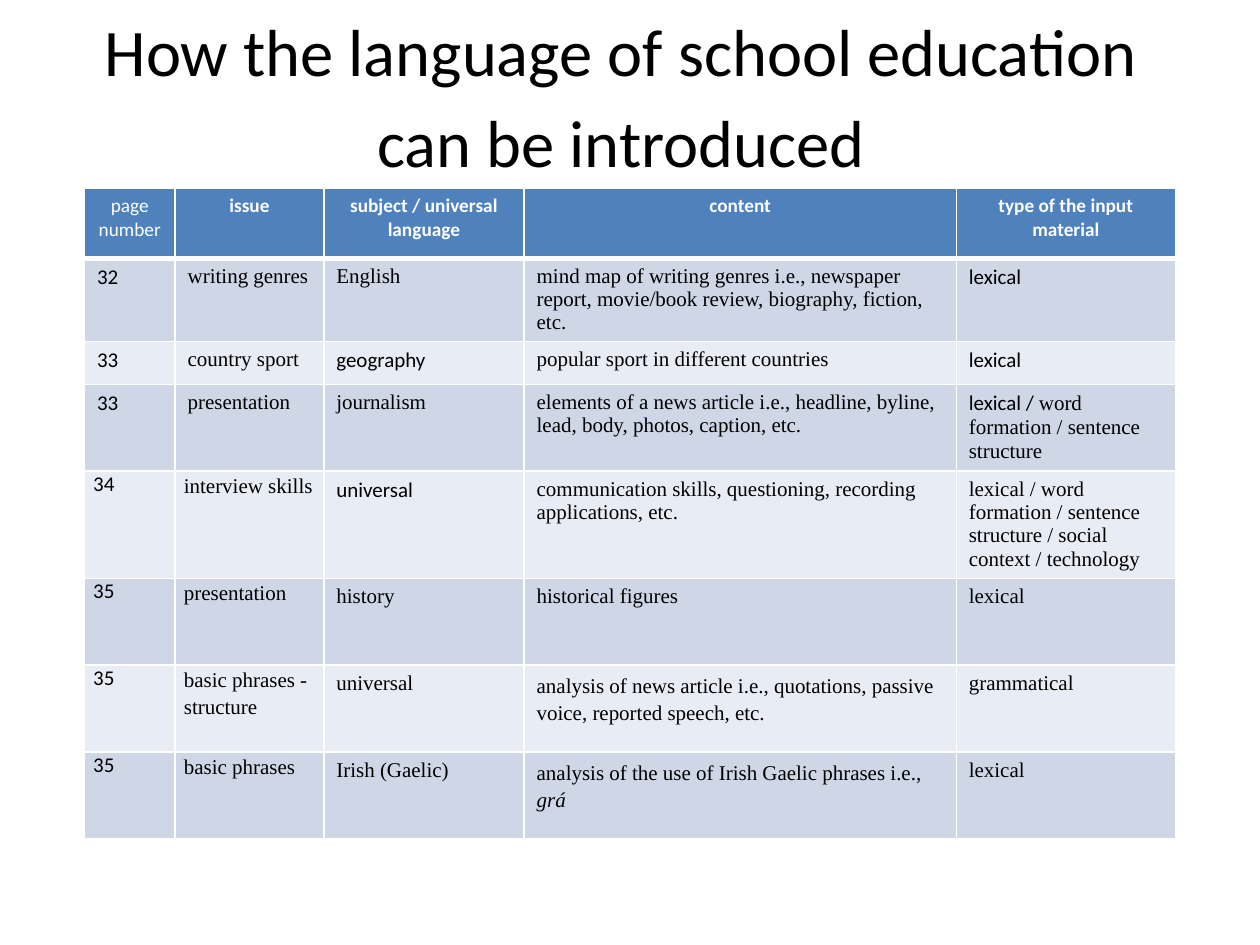
from dataclasses import dataclass

from lxml import etree
from pptx import Presentation
from pptx import util as u
from pptx.dml.color import RGBColor
from pptx.enum import text
from pptx.oxml import ns


@dataclass(frozen=True)
class Theme:
    """Colours, fonts and type sizes of the slide."""
    black: str = "000000"
    white: str = "FFFFFF"
    header: str = "4F81BD"
    bands: tuple = ("CFD7E7", "E8ECF4")
    sans: str = "Calibri"
    serif: str = "Times New Roman"
    title_size: int = 38
    header_size: int = 11
    body_size: int = 12
    loose: float = 1.15


@dataclass(frozen=True)
class Span:
    """A stretch of cell text with its own look."""
    words: str
    font: str = Theme.serif
    italic: bool = False


THEME = Theme()
COLUMNS = (0.72, 1.18, 1.59, 3.43, 1.74)
ROWS = (0.56, 0.66, 0.34, 0.69, 0.85, 0.69, 0.69, 0.69)
FIRST_TIGHT_ROW = 4
FIRST_LOOSE_CONTENT_ROW = 6
HEADINGS = ("page number", "issue", "subject / universal language", "content",
            "type of the input material")


def sans(words):
    """Return a span in the sans font."""
    return Span(words, THEME.sans)


LESSONS = (
    (sans("32"), "writing genres", "English",
     "mind map of writing genres i.e., newspaper report, movie/book review, "
     "biography, fiction, etc.", sans("lexical")),
    (sans("33"), "country sport", sans("geography"),
     "popular sport in different countries", sans("lexical")),
    (sans("33"), "presentation", "journalism",
     "elements of a news article i.e., headline, byline, lead, body, photos, "
     "caption, etc.",
     (sans("lexical / "), Span("word formation / sentence structure"))),
    (sans("34"), "interview skills", sans("universal"),
     "communication skills, questioning, recording applications, etc.",
     "lexical / word formation / sentence structure / social context / technology"),
    (sans("35"), "presentation", "history", "historical figures", "lexical"),
    (sans("35"), "basic phrases - structure", "universal",
     "analysis of news article i.e., quotations, passive voice, reported "
     "speech, etc.", "grammatical"),
    (sans("35"), "basic phrases", "Irish (Gaelic)",
     (Span("analysis of the use of Irish Gaelic phrases i.e., "),
      Span("grá", italic=True)), "lexical"),
)


def as_spans(content):
    """Return cell content as a tuple of spans."""
    if isinstance(content, str):
        return (Span(content),)
    return (content,) if isinstance(content, Span) else content


def add_span(para, words, font, size, color, bold=False, italic=False):
    """Add one formatted run to a paragraph."""
    span = para.add_run()
    span.text = words
    span.font.name = font
    span.font.size = u.Pt(size)
    span.font.bold = bold
    span.font.italic = italic
    span.font.color.rgb = RGBColor.from_string(color)


def add_title(page, words):
    """Add the centred slide title."""
    box = page.shapes.add_textbox(u.Inches(0.43), u.Inches(0.55),
                                  u.Inches(9), u.Inches(1))
    frame = box.text_frame
    frame.word_wrap = True
    frame.auto_size = text.MSO_AUTO_SIZE.NONE
    frame.vertical_anchor = text.MSO_ANCHOR.MIDDLE
    frame.margin_bottom = u.Inches(0.73)
    para = frame.paragraphs[0]
    para.alignment = text.PP_ALIGN.CENTER
    para.line_spacing = THEME.loose
    add_span(para, words, THEME.sans, THEME.title_size, THEME.black)


def set_borders(cell, bottom):
    """Draw white cell borders, with the given bottom width in points."""
    properties = cell._tc.get_or_add_tcPr()
    sides = (("lnL", 1), ("lnR", 1), ("lnT", 1), ("lnB", bottom))
    for place, (side, width) in enumerate(sides):
        line = etree.Element(ns.qn(f"a:{side}"), w=str(u.Pt(width)))
        fill = etree.SubElement(line, ns.qn("a:solidFill"))
        etree.SubElement(fill, ns.qn("a:srgbClr"), val=THEME.white)
        properties.insert(place, line)


def style_cell(cell, color, bottom=1, tight=False):
    """Set the fill, borders and margins of a cell."""
    cell.fill.solid()
    cell.fill.fore_color.rgb = RGBColor.from_string(color)
    set_borders(cell, bottom)
    cell.margin_left = cell.margin_right = u.Inches(0.07 if tight else 0.1)
    cell.margin_top = cell.margin_bottom = u.Inches(0 if tight else 0.05)


def fill_header(table):
    """Write the heading row."""
    for column, words in enumerate(HEADINGS):
        cell = table.cell(0, column)
        style_cell(cell, THEME.header, bottom=3)
        para = cell.text_frame.paragraphs[0]
        para.alignment = text.PP_ALIGN.CENTER
        add_span(para, words, THEME.sans, THEME.header_size, THEME.white,
                 bold=column > 0)


def fill_lesson(table, row, lesson):
    """Write one lesson row."""
    for column, content in enumerate(lesson):
        cell = table.cell(row, column)
        tight = row >= FIRST_TIGHT_ROW and column < 2
        style_cell(cell, THEME.bands[(row - 1) % 2],
                   tight=tight)
        para = cell.text_frame.paragraphs[0]
        loose_content = row >= FIRST_LOOSE_CONTENT_ROW and column == 3
        if (tight and column == 1) or loose_content:
            para.line_spacing = THEME.loose
        for part in as_spans(content):
            add_span(para, part.words, part.font, THEME.body_size,
                     THEME.black, italic=part.italic)


def add_lessons(page):
    """Add the table of lessons."""
    table = page.shapes.add_table(
        len(ROWS), len(COLUMNS), u.Inches(0.67), u.Inches(1.49),
        u.Inches(sum(COLUMNS)), u.Inches(sum(ROWS))).table
    for column, width in zip(table.columns, COLUMNS):
        column.width = u.Inches(width)
    for row, height in zip(table.rows, ROWS):
        row.height = u.Inches(height)
    fill_header(table)
    for row, lesson in enumerate(LESSONS, start=1):
        fill_lesson(table, row, lesson)


def main():
    """Build and save the deck."""
    deck = Presentation()
    deck.slide_width, deck.slide_height = u.Inches(10), u.Inches(7.5)
    page = deck.slides.add_slide(deck.slide_layouts[6])
    add_title(page, "How the language of school education can be introduced")
    add_lessons(page)
    deck.save("out.pptx")


if __name__ == "__main__":
    main()
